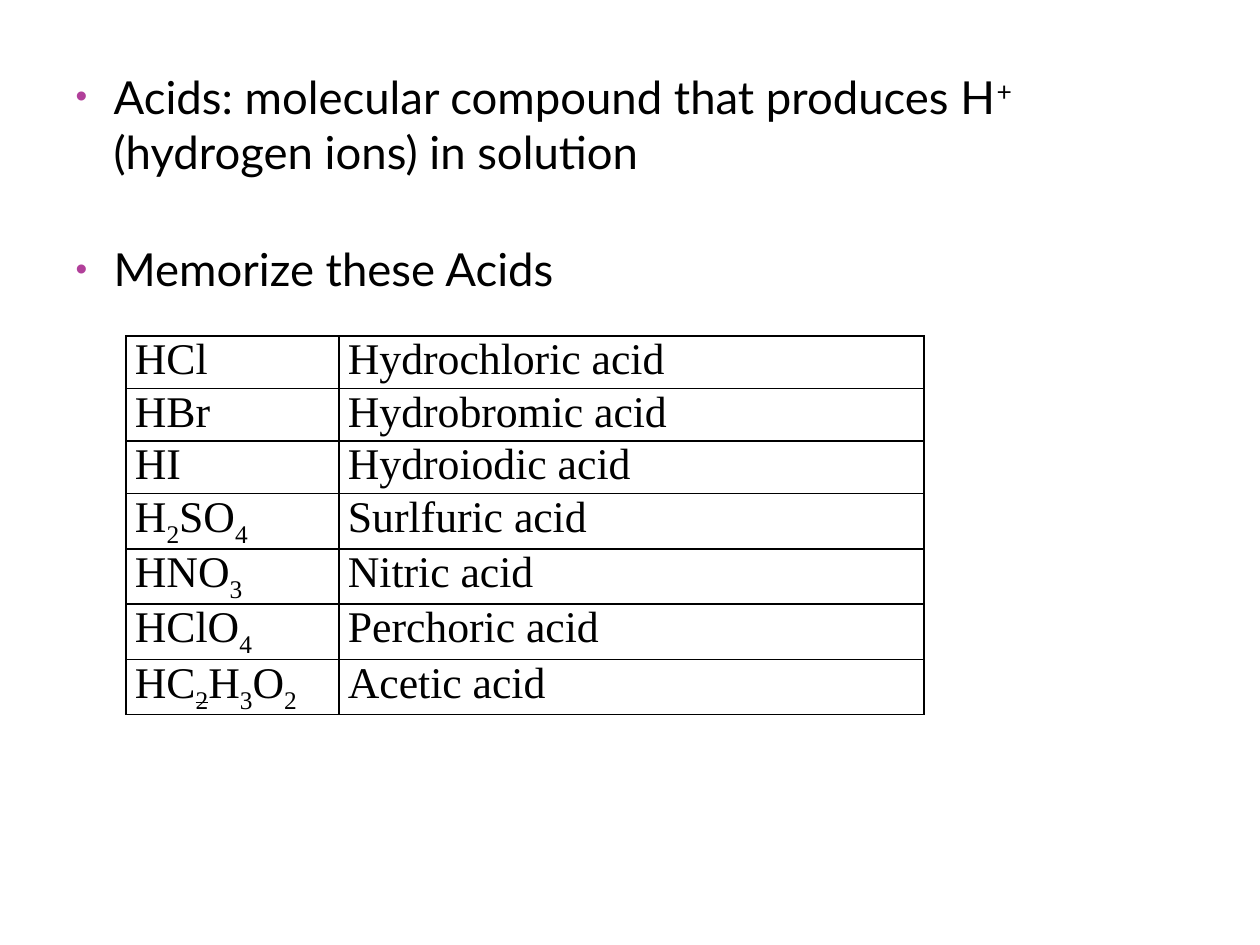
from dataclasses import dataclass
from itertools import groupby

from lxml.etree import SubElement
from pptx import Presentation
from pptx.dml.color import RGBColor
from pptx.enum.text import MSO_ANCHOR, MSO_AUTO_SIZE
from pptx.oxml.ns import qn
from pptx.util import Emu, Pt

EMU_PER_PX = 914400 / 126
SUPERSCRIPT, SUBSCRIPT = 30000, -25000


@dataclass(frozen=True)
class Theme:
    text: str = "000000"
    bullet: str = "B13F9A"
    border: str = "000000"
    body_font: str = "Lato"
    table_font: str = "Times New Roman"
    body_size: int = 26
    table_size: int = 25
    border_width: int = 1


def px(length):
    return Emu(round(length * EMU_PER_PX))


def formula_runs(formula):
    """Split a formula into (text, baseline) pairs with its digits lowered."""
    return [("".join(group), SUBSCRIPT if lowered else 0)
            for lowered, group in groupby(formula, str.isdigit)]


class SlideBuilder:
    def __init__(self, slide, theme):
        self.slide = slide
        self.theme = theme

    def add_runs(self, paragraph, pieces, font_name, size):
        for text, baseline in pieces:
            run = paragraph.add_run()
            run.text = text
            run.font.name = font_name
            run.font.size = Pt(size)
            run.font.color.rgb = RGBColor.from_string(self.theme.text)
            if baseline:
                run.font._element.set("baseline", str(baseline))

    def add_bullet(self, paragraph, indent):
        properties = paragraph._p.get_or_add_pPr()
        properties.set("marL", str(px(indent)))
        properties.set("indent", str(px(-indent)))
        color = SubElement(properties, qn("a:buClr"))
        SubElement(color, qn("a:srgbClr"), val=self.theme.bullet)
        SubElement(properties, qn("a:buSzPct"), val="73000")
        SubElement(properties, qn("a:buFont"), typeface="Arial")
        SubElement(properties, qn("a:buChar"), char="•")

    def fill_body(self, left, top, width, height, items, gap):
        """Put bulleted items in the body placeholder, gap points apart."""
        body = self.slide.placeholders[1]
        body.left, body.top = px(left), px(top)
        body.width, body.height = px(width), px(height)
        frame = body.text_frame
        frame.word_wrap = True
        frame.auto_size = MSO_AUTO_SIZE.NONE
        frame.vertical_anchor = MSO_ANCHOR.TOP
        for index, pieces in enumerate(items):
            paragraph = frame.add_paragraph() if index else frame.paragraphs[0]
            self.add_bullet(paragraph, indent=38)
            paragraph.space_before = Pt(gap if index else 0)
            self.add_runs(paragraph, pieces, self.theme.body_font, self.theme.body_size)

    def add_borders(self, cell):
        properties = cell._tc.get_or_add_tcPr()
        for side in ("lnL", "lnR", "lnT", "lnB"):
            line = SubElement(properties, qn(f"a:{side}"), w=str(Pt(self.theme.border_width)))
            fill = SubElement(line, qn("a:solidFill"))
            SubElement(fill, qn("a:srgbClr"), val=self.theme.border)

    def add_table(self, left, top, column_widths, height, rows):
        table = self.slide.shapes.add_table(
            len(rows), len(column_widths), px(left), px(top),
            px(sum(column_widths)), px(height)).table
        table.first_row = table.horz_banding = False
        for column, width in zip(table.columns, column_widths):
            column.width = px(width)
        for row, contents in zip(table.rows, rows):
            for cell, pieces in zip(row.cells, contents):
                cell.margin_left = cell.margin_right = px(9)
                cell.margin_top = cell.margin_bottom = 0
                self.add_borders(cell)
                cell.fill.background()
                self.add_runs(cell.text_frame.paragraphs[0], pieces,
                              self.theme.table_font, self.theme.table_size)
        return table


def main():
    presentation = Presentation()
    presentation.slide_width, presentation.slide_height = px(1260), px(945)
    slide = presentation.slides.add_slide(presentation.slide_layouts[1])
    title = slide.shapes.title._element
    title.getparent().remove(title)
    builder = SlideBuilder(slide, Theme())

    builder.fill_body(63, 63, 998, 827, [
        [("Acids: molecular compound that produces H", 0), ("+", SUPERSCRIPT),
         (" (hydrogen ions) in solution", 0)],
        [("Memorize these Acids", 0)],
    ], gap=36)

    acids = [
        ("HCl", "Hydrochloric acid"),
        ("HBr", "Hydrobromic acid"),
        ("HI", "Hydroiodic acid"),
        ("H2SO4", "Surlfuric acid"),
        ("HNO3", "Nitric acid"),
        ("HClO4", "Perchoric acid"),
        ("HC2H3O2", "Acetic acid"),
    ]
    table = builder.add_table(126, 336, [213, 585], 368, [
        (formula_runs(formula), [(name, 0)]) for formula, name in acids])
    acetic_formula = table.cell(len(acids) - 1, 0).text_frame.paragraphs[0]
    acetic_formula.runs[1].font._element.set("strike", "sngStrike")

    presentation.save("out.pptx")


if __name__ == "__main__":
    main()
